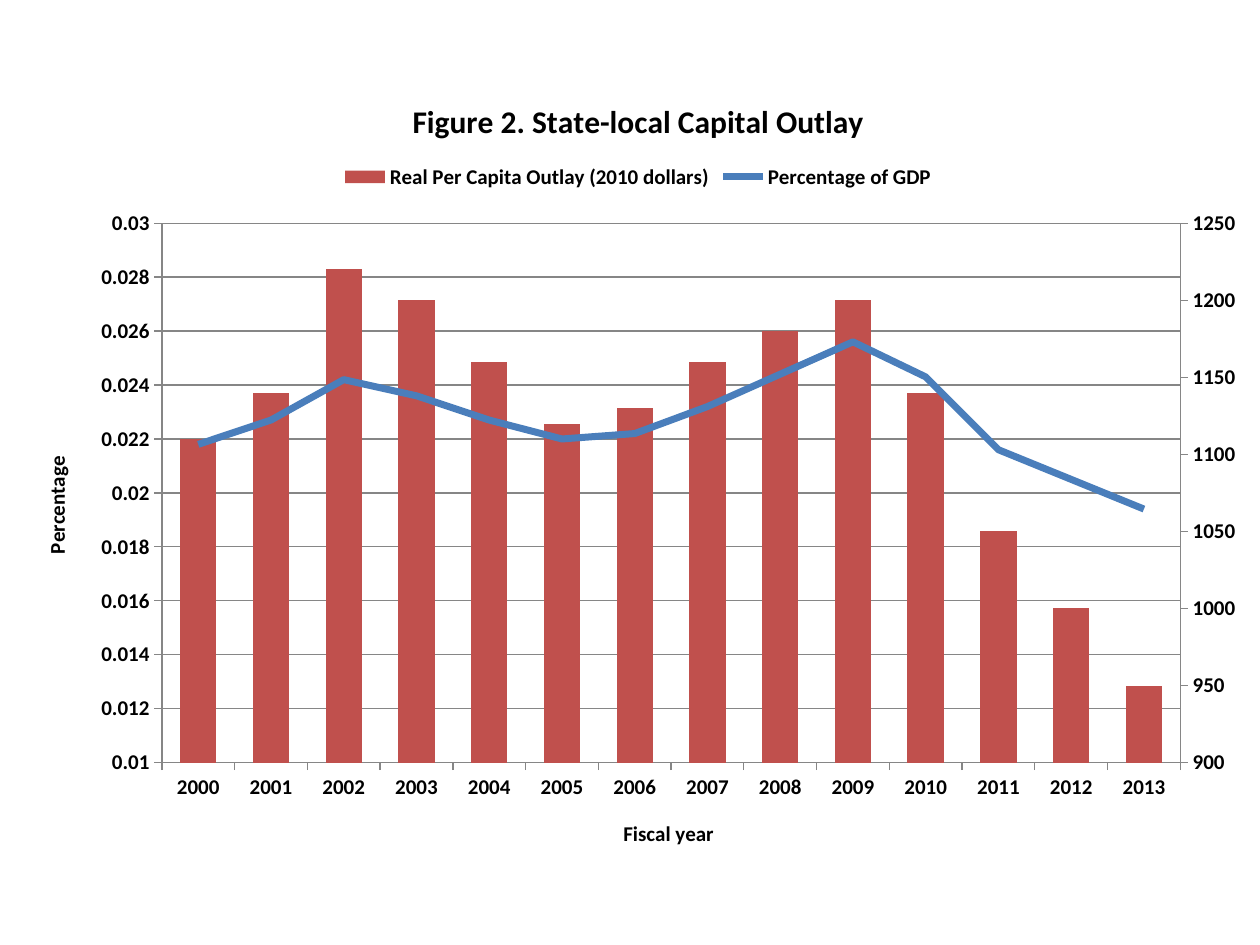
from copy import deepcopy

from lxml import etree
from pptx import Presentation
from pptx.chart.data import CategoryChartData
from pptx.dml.color import RGBColor
from pptx.enum.chart import XL_CHART_TYPE as ChartType
from pptx.enum.chart import XL_LEGEND_POSITION as LegendPos
from pptx.enum.chart import XL_TICK_MARK as Tick
from pptx.oxml import parse_xml
from pptx.oxml.ns import nsdecls, qn
from pptx.util import Cm, Pt

RED = RGBColor(0xC0, 0x50, 0x4D)
BLUE = RGBColor(0x4A, 0x7E, 0xBB)
GRAY = RGBColor(0x86, 0x86, 0x86)
BLACK = RGBColor(0, 0, 0)

OUTLAY = [1110, 1140, 1220, 1200, 1160, 1120, 1130,
          1160, 1180, 1200, 1140, 1050, 1000, 950]
GDP_SHARE = [0.0218, 0.0227, 0.0242, 0.0236, 0.0227, 0.022, 0.0222,
             0.0232, 0.0244, 0.0256, 0.0243, 0.0216, 0.0205, 0.0194]


def layout_xml(x, y, w=None, h=None):
    """Manual layout as fractions of the chart; with a size, for the inner plot."""
    target = '<c:layoutTarget val="inner"/>' if w else ""
    size = f'<c:w val="{w}"/><c:h val="{h}"/>' if w else ""
    return parse_xml(
        f'<c:layout {nsdecls("c")}><c:manualLayout>{target}'
        '<c:xMode val="edge"/><c:yMode val="edge"/>'
        f'<c:x val="{x}"/><c:y val="{y}"/>{size}</c:manualLayout></c:layout>')


def write_title(title, text, size=12, x=0, y=0):
    tf = title.text_frame
    r = tf.paragraphs[0].add_run()
    r.text = text
    r.font.name, r.font.size, r.font.bold = "Calibri", Pt(size), True
    r.font.color.rgb = BLACK
    el = title._element
    for old in el.findall(qn("c:layout")):
        el.remove(old)
    el.find(qn("c:tx")).addnext(layout_xml(x, y))


prs = Presentation()
prs.slide_width, prs.slide_height = Cm(25.4), Cm(19.05)
s = prs.slides.add_slide(prs.slide_layouts[6])

data = CategoryChartData()
data.categories = [str(year) for year in range(2000, 2014)]
data.add_series("Real Per Capita Outlay (2010 dollars)", OUTLAY)
data.add_series("Percentage of GDP", GDP_SHARE)
chart = s.shapes.add_chart(ChartType.COLUMN_CLUSTERED, Cm(0.33), Cm(1.42),
                           Cm(25.07), Cm(16.21), data).chart
chart.font.name, chart.font.size, chart.font.bold = "Calibri", Pt(12), True
chart.font.color.rgb = BLACK
write_title(chart.chart_title, "Figure 2. State-local Capital Outlay",
            size=18, x=0.314, y=0.029)
chart.has_legend = True
chart.legend.position = LegendPos.TOP
chart.legend.include_in_layout = False

plot = chart.plots[0]
plot.gap_width = 100
plot.vary_by_categories = False
bars, line = plot.series
bars.format.fill.solid()
bars.format.fill.fore_color.rgb = RED

# Axes of the line: years below, share of GDP on the left
years, share = chart.category_axis, chart.value_axis
for axis in (years, share):
    axis.major_tick_mark = Tick.OUTSIDE
    axis.minor_tick_mark = Tick.NONE
    axis.format.line.color.rgb = GRAY
share.minimum_scale, share.maximum_scale, share.major_unit = 0.01, 0.03, 0.002
share.tick_labels.number_format = "General"
share.tick_labels.number_format_is_linked = False

# Axes of the bars: hidden years, dollars on the right
cat_ax, val_ax = years._element, share._element
bar_cat, bar_val = deepcopy(cat_ax), deepcopy(val_ax)
bar_ids = {cat_ax.find(qn("c:axId")).get("val"): "50010",
           val_ax.find(qn("c:axId")).get("val"): "50020"}
bar_chart = plot._element
line_ids = [deepcopy(el) for el in bar_chart.findall(qn("c:axId"))]
for parent in (bar_cat, bar_val, bar_chart):
    for tag in ("c:axId", "c:crossAx"):
        for el in parent.findall(qn(tag)):
            el.set("val", bar_ids[el.get("val")])
bar_cat.find(qn("c:delete")).set("val", "1")
bar_val.find(qn("c:axPos")).set("val", "r")
bar_val.find(qn("c:crosses")).set("val", "max")
bar_val.remove(bar_val.find(qn("c:majorGridlines")))
scaling = bar_val.find(qn("c:scaling"))
scaling.find(qn("c:min")).set("val", "900")
scaling.find(qn("c:max")).set("val", "1250")
bar_val.find(qn("c:majorUnit")).set("val", "50")
val_ax.addnext(bar_cat)
bar_cat.addnext(bar_val)

share.major_gridlines.format.line.color.rgb = GRAY
write_title(years.axis_title, "Fiscal year", x=0.485, y=0.926)
write_title(share.axis_title, "Percentage", x=0.018, y=0.475)
share.axis_title.text_frame._txBody.find(qn("a:bodyPr")).set("rot", "-5400000")

# Second series becomes a line plot
line_chart = parse_xml(f'<c:lineChart {nsdecls("c")}><c:grouping val="standard"/>'
                       '<c:varyColors val="0"/></c:lineChart>')
line_ser = line._element
for el in line_ser.findall(qn("c:invertIfNegative")):
    line_ser.remove(el)
line_chart.append(line_ser)
etree.SubElement(line_chart, qn("c:marker")).set("val", "1")
line_chart.extend(line_ids)
bar_chart.addnext(line_chart)
gdp = chart.plots[1].series[0]
gdp.smooth = False
gdp.format.line.color.rgb = BLUE
gdp.format.line.width = Pt(4)
marker = parse_xml(f'<c:marker {nsdecls("c")}><c:symbol val="none"/></c:marker>')
line_ser.find(qn("c:spPr")).addnext(marker)

plot_area = bar_chart.getparent()
for old in plot_area.findall(qn("c:layout")):
    plot_area.remove(old)
plot_area.insert(0, layout_xml(0.117, 0.19, 0.819, 0.671))

prs.save("out.pptx")
